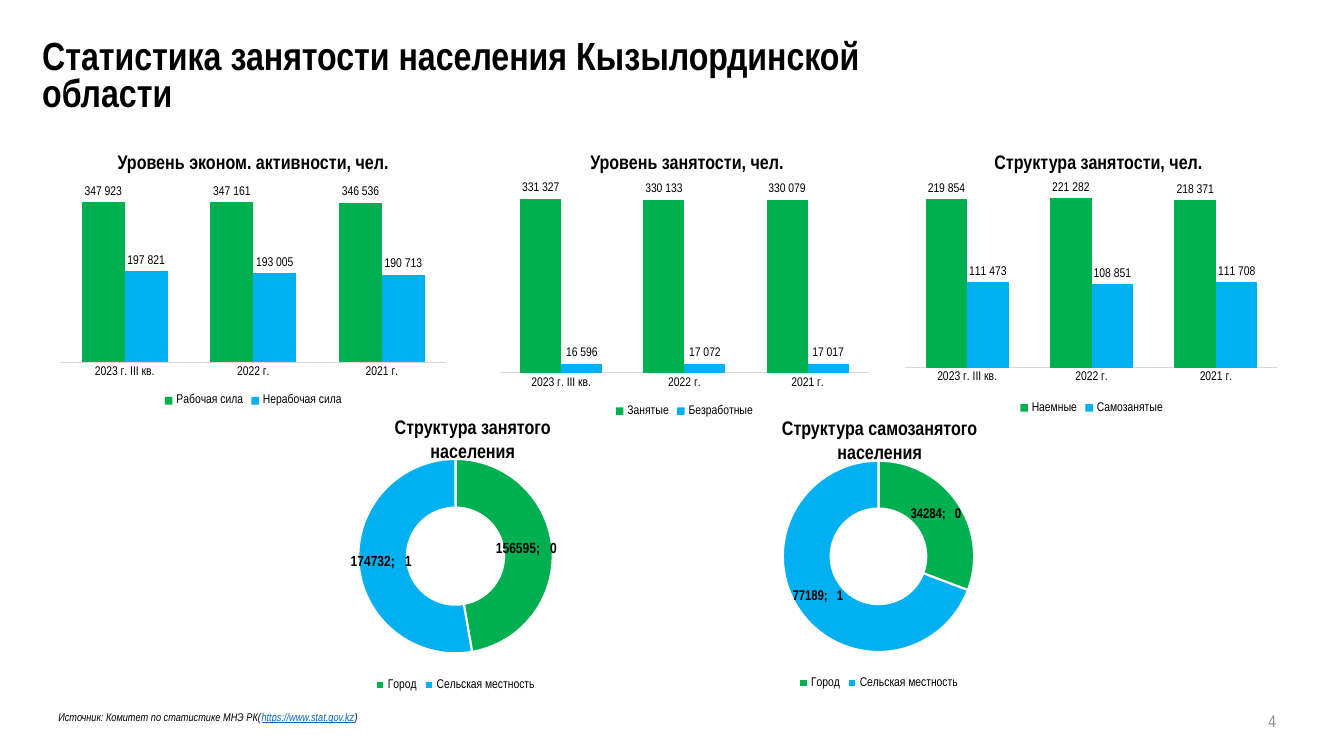
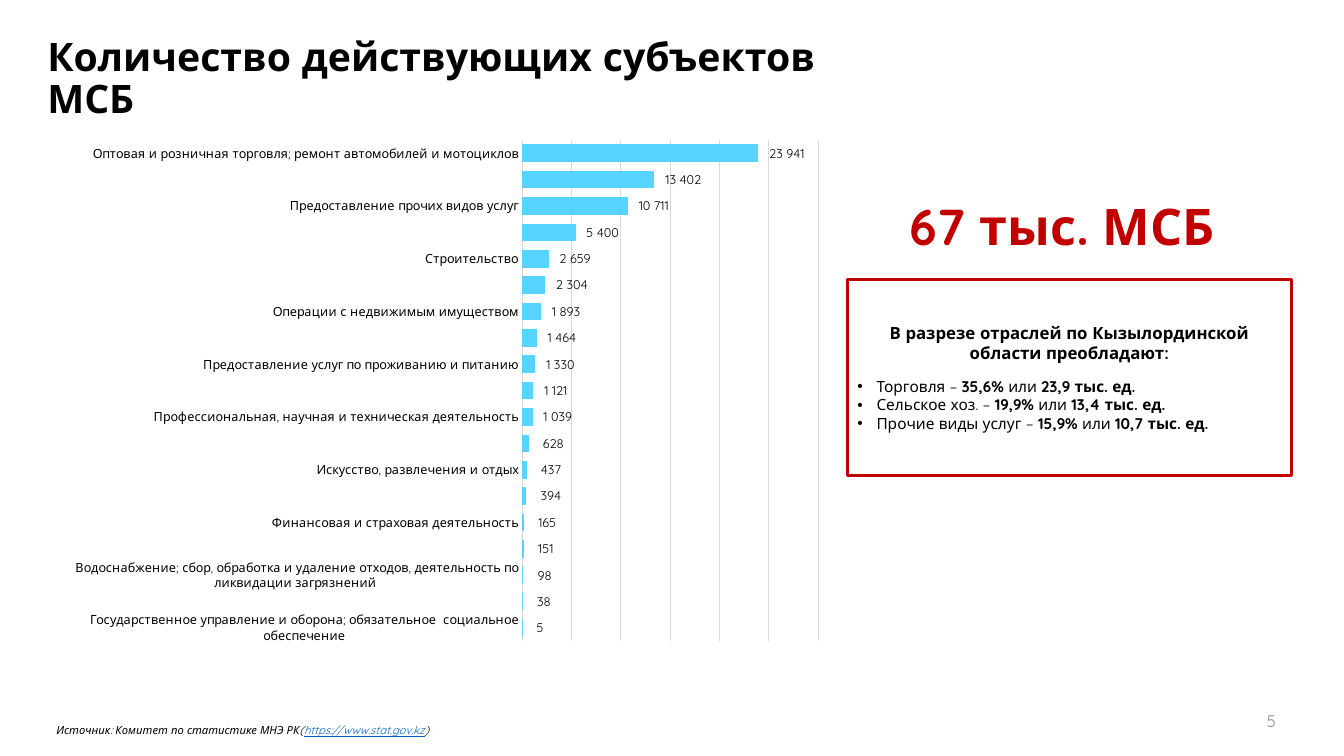
"""Build two slides on employment and small business in the Kyzylorda region."""
import lxml.etree
import pptx
import pptx.chart.data
import pptx.dml.color
import pptx.enum.chart
import pptx.enum.shapes
import pptx.enum.text
import pptx.oxml.ns
import pptx.util

COLORS = {"black": "000000", "gray": "8C8C8C", "rule": "D9D9D9", "green": "00B050",
          "blue": "00B0F0", "sky": "57D3FF", "red": "C00000", "link": "0563C1",
          "white": "FFFFFF"}
NARROW, ROUND = "Arial Narrow", "Quicksand"
PAIR = ["green", "blue"]
SPACED = '_-* #\\ ##0_-;\\-* #\\ ##0_-;_-* "-"??_-;_-'
GROUPED = "###\\ ###\\ ###\\ ##0"
CENTER = pptx.enum.text.PP_ALIGN.CENTER
RIGHT = pptx.enum.text.PP_ALIGN.RIGHT
MIDDLE = pptx.enum.text.MSO_ANCHOR.MIDDLE
KINDS = pptx.enum.chart.XL_CHART_TYPE

SOURCE = [("Источник: Комитет по статистике МНЭ РК(", {}),
          ("https://www.stat.gov.kz", {"color": "link", "under": True}),
          (")", {})]
PAGE_BOX = (30.66, 17.65, 1.75, 1.02)

YEARS = ["2023 г. III кв.", "2022 г.", "2021 г."]
COLUMNS = [
    {"title": "Уровень эконом. активности, чел.", "head": (1.52, 3.66, 9.73, 0.86),
     "box": (1.32, 4.37, 10.13, 5.99), "top": 400000,
     "data": [("Рабочая сила", [347923, 347161, 346536]),
              ("Нерабочая сила", [197821, 193005, 190713])]},
    {"title": "Уровень занятости, чел.", "head": (13.72, 3.66, 7.19, 0.86),
     "box": (12.4, 4.6, 9.7, 6.02), "top": 350000,
     "data": [("Занятые", [331327, 330133, 330079]),
              ("Безработные", [16596, 17072, 17017])]},
    {"title": "Структура занятости, чел.", "head": (23.85, 3.66, 7.67, 0.86),
     "box": (22.61, 4.32, 9.8, 6.22), "top": 250000,
     "data": [("Наемные", [219854, 221282, 218371]),
              ("Самозанятые", [111473, 108851, 111708])]},
]

PLACES = ["Город", "Сельская местность"]
RINGS = [
    {"title": "Структура занятого населения", "head": (8.59, 10.34, 6.65, 1.45),
     "box": (6.5, 11.2, 9.96, 6.32), "size": 10.5, "data": [156595, 174732]},
    {"title": "Структура самозанятого населения", "head": (18.64, 10.36, 7.06, 1.45),
     "box": (16.94, 11.25, 10.41, 6.22), "size": 10, "data": [34284, 77189]},
]

TRADES = [
    ("Государственное управление и оборона; обязательное  социальное обеспечение", 5),
    ("Снабжение электроэнергией, газом, паром, горячей водой  и кондиционированным воздухом", 38),
    ("Водоснабжение; сбор, обработка и удаление отходов, деятельность по ликвидации загрязнений ", 98),
    ("Горнодобывающая промышленность и разработка карьеров", 151),
    ("Финансовая и страховая деятельность", 165),
    ("Информация и связь", 394),
    ("Искусство, развлечения и отдых", 437),
    ("Здравоохранение и социальное обслуживание населения", 628),
    ("Профессиональная, научная и техническая деятельность", 1039),
    ("Образование", 1121),
    ("Предоставление услуг по проживанию и питанию", 1330),
    ("Деятельность в области административного и вспомогательного обслуживания", 1464),
    ("Операции с недвижимым имуществом", 1893),
    ("Транспорт и складирование", 2304),
    ("Строительство", 2659),
    ("Обрабатывающая промышленность", 5400),
    ("Предоставление прочих видов услуг", 10711),
    ("Сельское, лесное и рыбное хозяйство", 13402),
    ("Оптовая и розничная торговля; ремонт автомобилей и мотоциклов", 23941),
]
LEADERS = [("Торговля", "35,6%", "23,9 тыс. ед."),
           ("Сельское хоз.", "19,9%", "13,4 тыс. ед."),
           ("Прочие виды услуг", "15,9%", "10,7 тыс. ед.")]


def rgb(name):
    return pptx.dml.color.RGBColor.from_string(COLORS[name])


def place(box):
    return [pptx.util.Cm(n) for n in box]


def add(parent, tag, **attrs):
    return lxml.etree.SubElement(parent, pptx.oxml.ns.qn(tag), attrs)


def style(font, face, size, color="black", bold=False, italic=False, under=False):
    font.name, font.size = face, pptx.util.Pt(size)
    font.bold, font.italic, font.underline = bold, italic, under
    font.color.rgb = rgb(color)


def write(frame, text, align=None, anchor=None, lines=None, after=None,
          bullet=False, more=False, **look):
    """Write one paragraph, given as a string or as (text, format) runs."""
    frame.word_wrap = True
    if anchor is not None:
        frame.vertical_anchor = anchor
    para = frame.add_paragraph() if more else frame.paragraphs[0]
    para.alignment = align or pptx.enum.text.PP_ALIGN.LEFT
    if lines:
        para.line_spacing = lines
    if after:
        para.space_after = pptx.util.Pt(after)
    if bullet:
        props = para._p.get_or_add_pPr()
        hang = pptx.util.Cm(0.48)
        props.set("marL", str(hang))
        props.set("indent", str(-hang))
        add(props, "a:buFont", typeface="Arial")
        add(props, "a:buChar", char="•")
    for words, extra in [(text, {})] if isinstance(text, str) else text:
        run = para.add_run()
        run.text = words
        style(run.font, **{**look, **extra})


def label(slide, box, text, **look):
    write(slide.shapes.add_textbox(*place(box)).text_frame, text, **look)


def start(deck, title, box, lines, face, page, foot):
    slide = deck.slides.add_slide(deck.slide_layouts[5])
    head = slide.shapes.title
    head.left, head.top, head.width, head.height = place(box)
    head.text_frame.auto_size = pptx.enum.text.MSO_AUTO_SIZE.NONE
    write(head.text_frame, title, anchor=MIDDLE, lines=lines, face=face, size=28, bold=True)
    label(slide, PAGE_BOX, page, align=RIGHT, anchor=MIDDLE, face=face, size=12, color="gray")
    label(slide, foot, SOURCE, face=face, size=8, italic=True)
    return slide


def chart(slide, kind, box, cats, rows, plot, face, form, size=9, bold=False):
    data = pptx.chart.data.CategoryChartData()
    data.categories = cats
    for name, vals in rows:
        data.add_series(name, vals)
    graph = slide.shapes.add_chart(kind, *place(box), data).chart
    graph.has_title = False
    style(graph.font, face, 9)
    graph.has_legend = kind != KINDS.BAR_CLUSTERED
    if graph.has_legend:
        graph.legend.position = pptx.enum.chart.XL_LEGEND_POSITION.BOTTOM
        graph.legend.include_in_layout = False
        style(graph.legend.font, face, 9)
    area = graph.element.xpath("c:chart/c:plotArea")[0]
    for old in area.xpath("c:layout"):
        area.remove(old)
    frame = lxml.etree.Element(pptx.oxml.ns.qn("c:layout"))
    area.insert(0, frame)
    manual = add(frame, "c:manualLayout")
    add(manual, "c:layoutTarget", val="inner")
    for side in ("xMode", "yMode"):
        add(manual, "c:" + side, val="edge")
    for side, part in zip("xywh", plot):
        add(manual, "c:" + side, val=f"{part:.3f}")
    for row in graph.plots[0].series:
        tags = row.data_labels
        tags.show_value = True
        tags.number_format, tags.number_format_is_linked = form, False
        style(tags.font, face, size, bold=bold)
    return graph


def fill(part, color):
    part.format.fill.solid()
    part.format.fill.fore_color.rgb = rgb(color)


def bars(slide, kind, box, cats, rows, plot, face, form, colors, top, gap, grid=False):
    graph = chart(slide, kind, box, cats, rows, plot, face, form)
    group = graph.plots[0]
    group.vary_by_categories = False
    group.gap_width, group.overlap = gap, 0
    for row, color in zip(group.series, colors):
        fill(row, color)
        row.invert_if_negative = False
        row.data_labels.position = pptx.enum.chart.XL_LABEL_POSITION.OUTSIDE_END
    axis, scale = graph.category_axis, graph.value_axis
    axis.major_tick_mark = pptx.enum.chart.XL_TICK_MARK.NONE
    style(axis.tick_labels.font, face, 9)
    scale.minimum_scale, scale.maximum_scale = 0, top
    scale.has_major_gridlines = grid
    lines = [axis.format.line]
    if grid:
        lines.append(scale.major_gridlines.format.line)
    for line in lines:
        line.color.rgb, line.width = rgb("rule"), pptx.util.Pt(0.75)
    scale.visible = False


def ring(slide, box, vals, size):
    wide, high = box[2:]
    share = 0.775 * high / wide
    plot = ((1 - share) / 2, 0.058, share, 0.775)
    graph = chart(slide, KINDS.DOUGHNUT, box, PLACES, [("Series 1", vals)], plot,
                  NARROW, SPACED, size=size, bold=True)
    graph.plots[0].vary_by_categories = True
    graph.element.xpath(".//c:holeSize")[0].set("val", "35")
    row = graph.plots[0].series[0]
    row.data_labels.show_percentage = True
    mark = lxml.etree.Element(pptx.oxml.ns.qn("c:separator"))
    mark.text = "; "
    row.data_labels._element.xpath("c:showBubbleSize")[0].addnext(mark)
    for index, color in enumerate(PAIR):
        point = row.points[index]
        fill(point, color)
        point.format.line.color.rgb = rgb("white")
        point.format.line.width = pptx.util.Pt(1.5)


def jobs(deck):
    slide = start(deck, "Статистика занятости населения Кызылординской области",
                  (0.81, 0.84, 24.41, 2.24), 0.8, NARROW, "4", (1.22, 17.78, 21.34, 0.61))
    for item in COLUMNS + RINGS:
        label(slide, item["head"], item["title"], align=CENTER, face=NARROW, size=14, bold=True)
    for item in COLUMNS:
        bars(slide, KINDS.COLUMN_CLUSTERED, item["box"], YEARS, item["data"],
             (0.02, 0.02, 0.96, 0.775), NARROW, SPACED, PAIR, item["top"], 100)
    for item in RINGS:
        ring(slide, item["box"], item["data"], item["size"])


def firms(deck):
    slide = start(deck, "Количество действующих субъектов МСБ",
                  (0.94, 0.76, 22.3, 2.51), 0.9, ROUND, "5", (1.17, 18.11, 21.34, 0.61))
    label(slide, (22.17, 4.78, 9.19, 1.8), "67 тыс. МСБ", align=CENTER,
          face=ROUND, size=36, color="red", bold=True)
    panel = slide.shapes.add_shape(pptx.enum.shapes.MSO_SHAPE.RECTANGLE,
                                   *place((21.36, 7.04, 11.18, 4.95)))
    panel.shadow.inherit = False
    panel.fill.background()
    panel.line.color.rgb, panel.line.width = rgb("red"), pptx.util.Pt(2)
    write(panel.text_frame, "В разрезе отраслей по Кызылординской области преобладают:",
          align=CENTER, anchor=MIDDLE, after=10, face=ROUND, size=12, bold=True)
    strong = {"bold": True}
    for name, share, count in LEADERS:
        write(panel.text_frame, [(name + " – ", {}), (share, strong), (" или ", {}),
                                 (count, strong)],
              bullet=True, more=True, face=ROUND, size=11)
    names, counts = zip(*TRADES)
    bars(slide, KINDS.BAR_CLUSTERED, (1.5, 3.28, 19.51, 13.21), names, [("Series 1", counts)],
         (0.598, 0.019, 0.382, 0.956), ROUND, GROUPED, ["sky"], 30000, 50, grid=True)


def main():
    deck = pptx.Presentation()
    deck.slide_width, deck.slide_height = place((33.87, 19.05))
    jobs(deck)
    firms(deck)
    deck.save("out.pptx")


if __name__ == "__main__":
    main()
